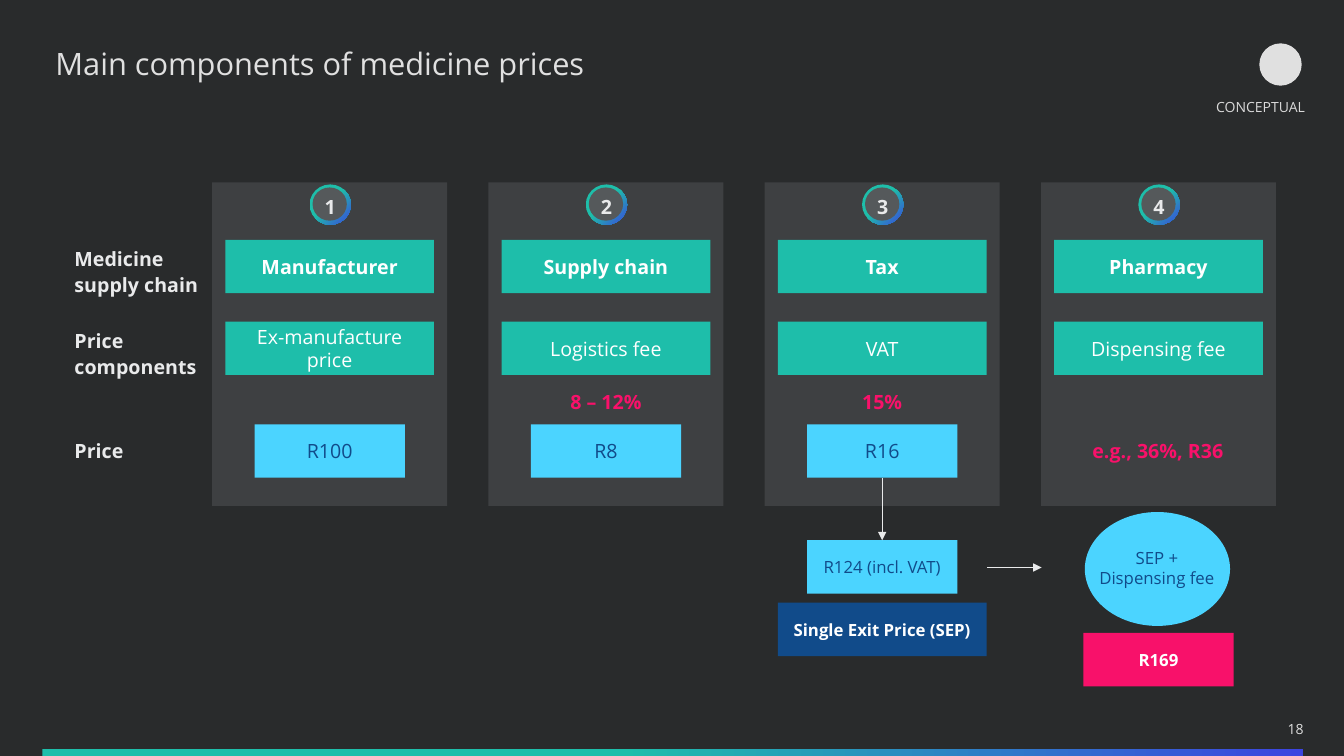
import dataclasses

import lxml.etree
import pptx
import pptx.dml.color
import pptx.enum.dml
import pptx.enum.shapes
import pptx.enum.text
import pptx.oxml.ns
import pptx.util

Inches = pptx.util.Inches
RGB = pptx.dml.color.RGBColor.from_string
SHAPE = pptx.enum.shapes.MSO_SHAPE
ALIGN = pptx.enum.text.PP_ALIGN
ANCHOR = pptx.enum.text.MSO_ANCHOR
qn = pptx.oxml.ns.qn


@dataclasses.dataclass(frozen=True)
class Theme:
    font: str = "Open Sans"
    background: str = "292B2C"
    panel: str = "3E4042"
    badge: str = "55595B"
    teal: str = "1EBEAA"
    indigo: str = "3C45E0"
    sky: str = "4BD4FF"
    navy: str = "114B8A"
    pink: str = "F8116A"
    white: str = "FFFFFF"
    light: str = "E9EAEB"
    title: str = "E0E0E0"
    tag: str = "D9D9D9"
    title_size: int = 22
    body_size: int = 14
    result_size: int = 12
    small_size: int = 10


T = Theme()


def write(sp, lines, size, color, bold=False, align=ALIGN.CENTER, anchor=ANCHOR.MIDDLE,
          spacing=1.0, wrap=True):
    tf = sp.text_frame
    tf.word_wrap = wrap
    tf.auto_size = pptx.enum.text.MSO_AUTO_SIZE.NONE
    tf.vertical_anchor = anchor
    for i, line in enumerate(lines):
        p = tf.add_paragraph() if i else tf.paragraphs[0]
        p.alignment = align
        p.line_spacing = spacing
        r = p.add_run()
        r.text = line
        r.font.name = T.font
        r.font.size = pptx.util.Pt(size)
        r.font.bold = bold
        r.font.color.rgb = RGB(color)


def add_shape(kind, x, y, w, h, color, angle=None):
    sp = s.shapes.add_shape(kind, Inches(x), Inches(y), Inches(w), Inches(h))
    sp.shadow.inherit = False
    sp.line.fill.background()
    if angle is None:
        sp.fill.solid()
        sp.fill.fore_color.rgb = RGB(color)
    else:
        sp.fill.gradient()
        sp.fill.gradient_angle = angle
        for stop, place, shade in zip(sp.fill.gradient_stops, (0.46, 1), (color, T.indigo)):
            stop.position = place
            stop.color.rgb = RGB(shade)
    return sp


prs = pptx.Presentation()
prs.slide_width = Inches(13.33)
prs.slide_height = Inches(7.5)
s = prs.slides.add_slide(prs.slide_layouts[5])
s.background.fill.solid()
s.background.fill.fore_color.rgb = RGB(T.background)

title = s.shapes.title
title.left, title.top = Inches(0.45), Inches(0.44)
title.width, title.height = Inches(11.95), Inches(0.54)
write(title, ["Main components of medicine prices"], T.title_size, T.title,
      align=ALIGN.LEFT, anchor=ANCHOR.TOP, spacing=0.9)

add_shape(SHAPE.RECTANGLE, 0.42, 7.43, 12.5, 0.07, T.teal, angle=0)
add_shape(SHAPE.OVAL, 12.49, 0.43, 0.42, 0.42, T.title)

first_center, pitch = 3.27, 2.74
panel_w, box_w, price_w, box_h = 2.33, 2.07, 1.49, 0.53
stage_y, component_y, price_y, sep_y = 2.38, 3.19, 4.21, 5.36

stages = [
    ("Manufacturer", "Ex-manufacture price", "R100"),
    ("Supply chain", "Logistics fee", "R8"),
    ("Tax", "VAT", "R16"),
    ("Pharmacy", "Dispensing fee", None),
]
centers = [first_center + pitch * i for i in range(len(stages))]
tax_x, pharmacy_x = centers[2:]

labels = []
price_boxes = {}
for number, (x, (stage, component, price)) in enumerate(zip(centers, stages), 1):
    add_shape(SHAPE.RECTANGLE, x - panel_w / 2, 1.81, panel_w, 3.21, T.panel)
    for text, y, bold in ((stage, stage_y, True), (component, component_y, False)):
        sp = add_shape(SHAPE.RECTANGLE, x - box_w / 2, y, box_w, box_h, T.teal)
        write(sp, [text], T.body_size, T.white, bold)
    if price:
        sp = add_shape(SHAPE.RECTANGLE, x - price_w / 2, price_y, price_w, box_h, T.sky)
        write(sp, [price], T.body_size, T.navy)
        price_boxes[stage] = sp
    add_shape(SHAPE.OVAL, x - 0.2, 1.83, 0.41, 0.4, T.teal, angle=315)
    add_shape(SHAPE.OVAL, x - 0.17, 1.86, 0.34, 0.33, T.badge)
    labels.append(([str(number)], x - 0.15, 1.86, 0.31, 0.35, T.light, ALIGN.CENTER))

labels += [
    (["Medicine", "supply chain"], 0.64, stage_y, 1.44, 0.61, T.light, ALIGN.LEFT),
    (["Price", "components"], 0.64, component_y, 1.42, 0.61, T.light, ALIGN.LEFT),
    (["Price"], 0.64, 4.28, 0.69, 0.35, T.light, ALIGN.LEFT),
    (["8 – 12%"], centers[1] - 0.46, 3.8, 0.92, 0.35, T.pink, ALIGN.CENTER),
    (["15%"], tax_x - 0.3, 3.8, 0.6, 0.35, T.pink, ALIGN.CENTER),
    (["e.g., 36%, R36"], pharmacy_x - 0.76, 4.28, 1.51, 0.35, T.pink, ALIGN.CENTER),
]
for lines, x, y, w, h, color, align in labels:
    tb = s.shapes.add_textbox(Inches(x), Inches(y), Inches(w), Inches(h))
    write(tb, lines, T.body_size, color, True, align, ANCHOR.TOP, 1.1, wrap=False)

sep_price = add_shape(SHAPE.RECTANGLE, tax_x - price_w / 2, sep_y, price_w, box_h, T.sky)
write(sep_price, ["R124 (incl. VAT)"], T.result_size, T.navy)
sep_name = add_shape(SHAPE.RECTANGLE, tax_x - box_w / 2, 5.98, box_w, box_h, T.navy)
write(sep_name, ["Single Exit Price (SEP)"], T.result_size, T.white, True)
add_shape(SHAPE.OVAL, pharmacy_x - 0.73, 5.08, 1.44, 1.13, T.sky)
tb = s.shapes.add_textbox(Inches(pharmacy_x - 0.73), Inches(5.37), Inches(1.43), Inches(0.53))
write(tb, ["SEP + Dispensing fee"], T.result_size, T.navy)
total = add_shape(SHAPE.RECTANGLE, pharmacy_x - price_w / 2, 6.28, price_w, box_h, T.pink)
write(total, ["R169"], T.result_size, T.white, True)

arrows = []
for x1, y1, x2, y2 in ((tax_x, price_y + box_h, tax_x, sep_y), (9.79, 5.63, 10.33, 5.63)):
    cx = s.shapes.add_connector(pptx.enum.shapes.MSO_CONNECTOR.STRAIGHT,
                                Inches(x1), Inches(y1), Inches(x2), Inches(y2))
    cx.line.color.rgb = RGB(T.light)
    cx.line.width = pptx.util.Pt(1)
    lxml.etree.SubElement(cx.line._get_or_add_ln(), qn("a:tailEnd"), type="triangle")
    lxml.etree.SubElement(cx._element.spPr, qn("a:effectLst"))
    arrows.append(cx)
arrows[0].begin_connect(price_boxes["Tax"], 2)
arrows[0].end_connect(sep_price, 0)

tag = s.shapes.add_textbox(Inches(11.76), Inches(0.91), Inches(1.28), Inches(0.28))
write(tag, ["CONCEPTUAL"], T.small_size, T.tag, align=ALIGN.RIGHT, anchor=ANCHOR.TOP, spacing=1.1)
page = s.shapes.add_textbox(Inches(12.62), Inches(7.15), Inches(0.31), Inches(0.17))
tf = page.text_frame
tf.margin_left = tf.margin_right = tf.margin_top = tf.margin_bottom = 0
write(page, ["18"], T.small_size, T.title, align=ALIGN.RIGHT, anchor=ANCHOR.TOP)

prs.save("out.pptx")
